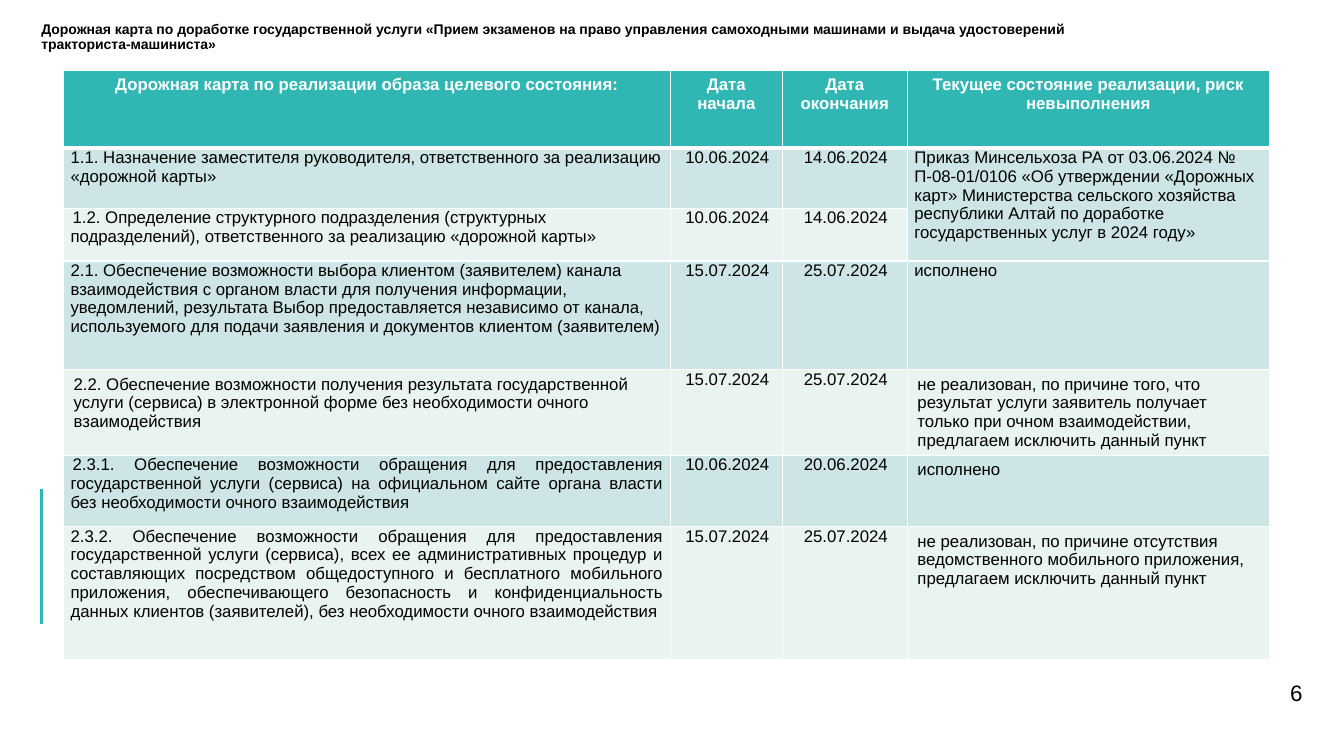
from dataclasses import dataclass
from typing import Any

from lxml.etree import SubElement
from pptx import Presentation
from pptx.dml.color import RGBColor
from pptx.enum.shapes import MSO_CONNECTOR
from pptx.enum.text import MSO_ANCHOR, MSO_AUTO_SIZE, PP_ALIGN
from pptx.oxml.ns import qn
from pptx.util import Emu, Pt

PX = 9144  # 100 px to the inch
COLORS = {
    "teal": "30B6B3",
    "band_dark": "CDE5E5",
    "band_light": "E8F3F2",
    "white": "FFFFFF",
    "black": "000000",
}
TITLE = (
    "Дорожная карта по доработке государственной услуги «Прием экзаменов на право "
    "управления самоходными машинами и выдача удостоверений тракториста-машиниста»"
)
HEADERS = (
    "Дорожная карта по реализации образа целевого состояния:",
    "Дата\nначала",
    "Дата окончания",
    "Текущее состояние реализации, риск невыполнения",
)
COLUMN_WIDTHS = (602, 111, 124, 359)
HEADER_HEIGHT = 77
FIRST_LINE_INDENT = 2


@dataclass(frozen=True)
class Entry:
    """Text of one cell; a tight cell has narrow side and no vertical margins."""
    text: str
    align: PP_ALIGN = PP_ALIGN.LEFT
    tight: bool = True
    indent: int = 0


@dataclass(frozen=True)
class Stage:
    height: int
    task: Entry
    start: str
    end: str
    status: Entry | None  # None continues the status above

    def entries(self) -> list[Entry | None]:
        dates = [Entry(day, PP_ALIGN.CENTER, indent=FIRST_LINE_INDENT)
                 for day in (self.start, self.end)]
        return [self.task, *dates, self.status]


STAGES = (
    Stage(60, Entry("1.1. Назначение заместителя руководителя, ответственного за реализацию "
                    "«дорожной карты»"),
          "10.06.2024", "14.06.2024",
          Entry("Приказ Минсельхоза РА от 03.06.2024 № П-08-01/0106 «Об утверждении «Дорожных "
                "карт» Министерства сельского хозяйства республики Алтай по доработке "
                "государственных услуг в 2024 году»")),
    Stage(52, Entry("1.2. Определение структурного подразделения (структурных подразделений), "
                    "ответственного за реализацию «дорожной карты»", indent=FIRST_LINE_INDENT),
          "10.06.2024", "14.06.2024", None),
    Stage(108, Entry("2.1. Обеспечение возможности выбора клиентом (заявителем) канала "
                     "взаимодействия с органом власти для получения информации, уведомлений, "
                     "результата Выбор предоставляется независимо от канала, используемого для "
                     "подачи заявления и документов клиентом (заявителем)"),
          "15.07.2024", "25.07.2024", Entry("исполнено")),
    Stage(77, Entry("2.2. Обеспечение возможности получения результата государственной услуги "
                    "(сервиса) в электронной форме без необходимости очного взаимодействия",
                    tight=False),
          "15.07.2024", "25.07.2024",
          Entry("не реализован, по причине того, что результат услуги заявитель получает только "
                "при очном взаимодействии, предлагаем исключить данный пункт", tight=False)),
    Stage(71, Entry("2.3.1. Обеспечение возможности обращения для предоставления "
                    "государственной услуги (сервиса) на официальном сайте органа власти без "
                    "необходимости очного взаимодействия",
                    PP_ALIGN.JUSTIFY, indent=FIRST_LINE_INDENT),
          "10.06.2024", "20.06.2024", Entry("исполнено", tight=False)),
    Stage(132, Entry("2.3.2. Обеспечение возможности обращения для предоставления "
                     "государственной услуги (сервиса), всех ее административных процедур и "
                     "составляющих посредством общедоступного и бесплатного мобильного "
                     "приложения, обеспечивающего безопасность и конфиденциальность данных "
                     "клиентов (заявителей), без необходимости очного взаимодействия",
                     PP_ALIGN.JUSTIFY),
          "15.07.2024", "25.07.2024",
          Entry("не реализован, по причине отсутствия ведомственного мобильного приложения, "
                "предлагаем исключить данный пункт", tight=False)),
)


def px(length: int) -> Emu:
    return Emu(length * PX)


def color(name: str) -> RGBColor:
    return RGBColor.from_string(COLORS[name])


def assign(target: Any, values: dict[str, Any]) -> None:
    for name, value in values.items():
        setattr(target, name, value)


def format_text(frame: Any, size: int, ink: str, bold: bool, align: PP_ALIGN) -> None:
    for para in frame.paragraphs:
        para.alignment = align
        assign(para.font, {"name": "Arial", "size": Pt(size), "bold": bold})
        para.font.color.rgb = color(ink)


def format_frame(frame: Any, anchor: MSO_ANCHOR) -> None:
    assign(frame, {
        "margin_left": 0, "margin_top": 0, "margin_right": 0, "margin_bottom": 0,
        "word_wrap": True, "auto_size": MSO_AUTO_SIZE.NONE, "vertical_anchor": anchor,
    })


def add_borders(cell: Any, bottom: int) -> None:
    properties = cell._tc.get_or_add_tcPr()
    for side, points in (("L", 1), ("R", 1), ("T", 1), ("B", bottom)):
        line = SubElement(properties, qn(f"a:ln{side}"), w=str(Pt(points)))
        fill = SubElement(line, qn("a:solidFill"))
        SubElement(fill, qn("a:srgbClr"), val=COLORS["white"])


def paint_cell(cell: Any, fill: str, bottom: int = 1) -> None:
    add_borders(cell, bottom)
    cell.fill.solid()
    cell.fill.fore_color.rgb = color(fill)


def write_entry(cell: Any, entry: Entry, ink: str, bold: bool) -> None:
    cell.text = entry.text
    if entry.tight:
        assign(cell, {"margin_left": px(7), "margin_right": px(7),
                      "margin_top": 0, "margin_bottom": 0})
    if entry.indent:
        properties = cell.text_frame.paragraphs[0]._p.get_or_add_pPr()
        properties.set("marL", "0")
        properties.set("indent", str(px(entry.indent)))
    format_text(cell.text_frame, 12, ink, bold, entry.align)


def add_roadmap(slide: Any) -> None:
    heights = [HEADER_HEIGHT, *(stage.height for stage in STAGES)]
    table = slide.shapes.add_table(
        len(heights), len(COLUMN_WIDTHS),
        px(63), px(70), px(sum(COLUMN_WIDTHS)), px(sum(heights))).table
    for column, width in zip(table.columns, COLUMN_WIDTHS):
        column.width = px(width)
    for row, height in zip(table.rows, heights):
        row.height = px(height)

    for cell, header in zip(table.rows[0].cells, HEADERS):
        paint_cell(cell, "teal", bottom=3)
        write_entry(cell, Entry(header, PP_ALIGN.CENTER, tight=False), "white", True)
    for row_index, stage in enumerate(STAGES, start=1):
        band = "band_dark" if row_index % 2 else "band_light"
        for column_index, entry in enumerate(stage.entries()):
            cell = table.cell(row_index, column_index)
            paint_cell(cell, band)
            if entry:
                write_entry(cell, entry, "black", False)
            else:
                table.cell(row_index - 1, column_index).merge(cell)


def add_title(slide: Any) -> None:
    title = slide.shapes.title
    assign(title, {"left": px(41), "top": px(22), "width": px(1105), "height": px(39)})
    title.text_frame.text = TITLE
    format_frame(title.text_frame, MSO_ANCHOR.TOP)
    format_text(title.text_frame, 10, "black", True, PP_ALIGN.LEFT)
    title.text_frame.paragraphs[0].line_spacing = 0.9


def add_page_number(slide: Any) -> None:
    box = slide.shapes.add_textbox(px(1186), px(666), px(106), px(43))
    box.text_frame.text = "6"
    format_frame(box.text_frame, MSO_ANCHOR.MIDDLE)
    format_text(box.text_frame, 16, "black", False, PP_ALIGN.RIGHT)


def add_accent_line(slide: Any) -> None:
    accent = slide.shapes.add_connector(
        MSO_CONNECTOR.STRAIGHT, px(41), px(485), px(41), px(619))
    accent.line.color.rgb = color("teal")
    accent.line.width = Pt(2.25)
    SubElement(accent._element.spPr, qn("a:effectLst"))


def main() -> None:
    deck = Presentation()
    assign(deck, {"slide_width": px(1333), "slide_height": px(750)})
    slide = deck.slides.add_slide(deck.slide_layouts.get_by_name("Title Only"))
    add_title(slide)
    add_page_number(slide)
    add_accent_line(slide)
    add_roadmap(slide)
    deck.save("out.pptx")


if __name__ == "__main__":
    main()
